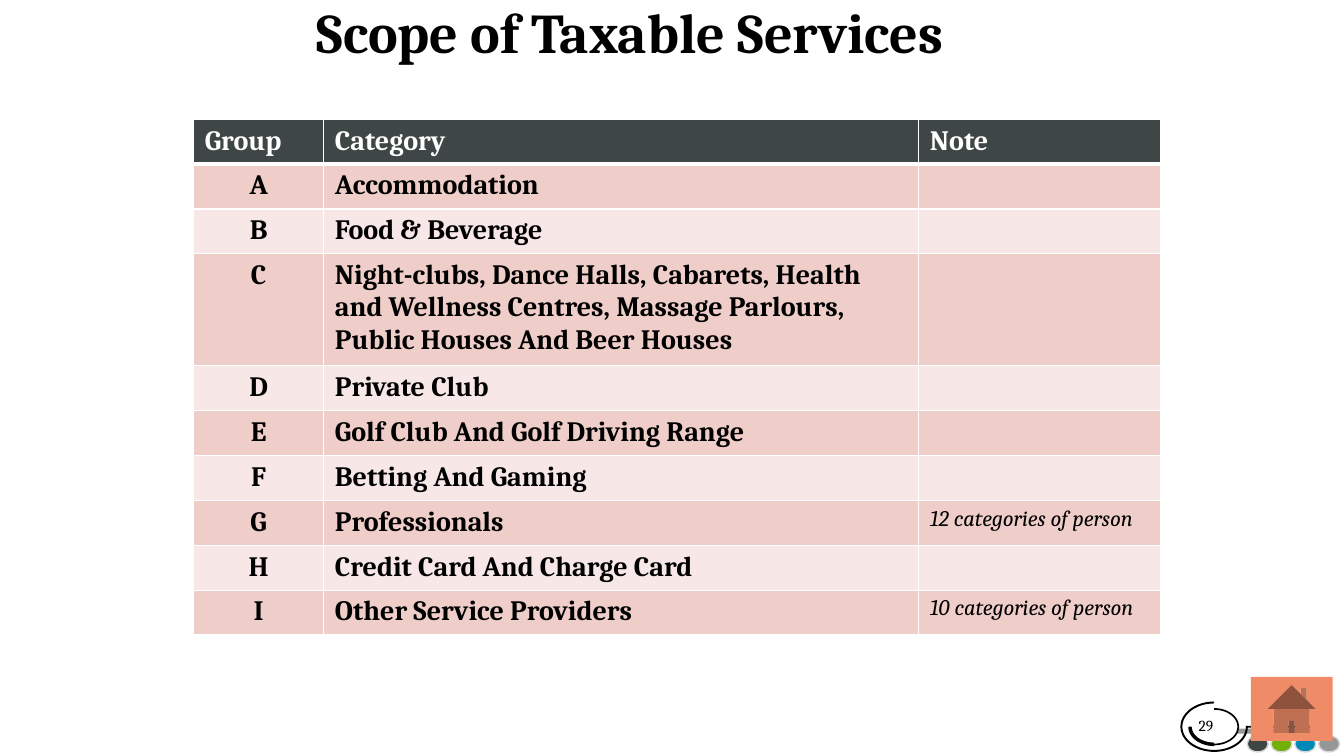
import math

import lxml.etree
import pptx
import pptx.dml.color
import pptx.enum.shapes
import pptx.enum.text
import pptx.oxml.ns
import pptx.util

Pt = pptx.util.Pt
SHAPES = pptx.enum.shapes.MSO_SHAPE
ALIGN = pptx.enum.text.PP_ALIGN
FONT = "Cambria"
COLOURS = {
    "black": "000000", "white": "FFFFFF", "header": "3F4646",
    "odd_row": "EFCECA", "even_row": "F7E8E7", "home": "EF8B67",
    "bar": "999999", "dot_line": "D8D8D8",
    "slate": "3F4646", "green": "71AF09", "blue": "0089B7", "grey": "959698",
}
HEADINGS = ("Group", "Category", "Note")
SERVICES = [
    ("A", "Accommodation", ""),
    ("B", "Food & Beverage", ""),
    ("C", "Night-clubs, Dance Halls, Cabarets, Health and Wellness Centres, "
          "Massage Parlours, Public Houses And Beer Houses", ""),
    ("D", "Private Club", ""),
    ("E", "Golf Club And Golf Driving Range", ""),
    ("F", "Betting And Gaming", ""),
    ("G", "Professionals", "12 categories of person"),
    ("H", "Credit Card And Charge Card", ""),
    ("I", "Other Service Providers", "10 categories of person"),
]


def colour(name):
    """Return the named colour as an RGB value."""
    return pptx.dml.color.RGBColor.from_string(COLOURS[name])


def add_run(paragraph, text, size, colour_name="black", bold=False, italic=False):
    """Add one formatted run to a paragraph."""
    run = paragraph.add_run()
    run.text = text
    run.font.name = FONT
    run.font.size = Pt(size)
    run.font.bold = bold
    run.font.italic = italic
    run.font.color.rgb = colour(colour_name)


def paint(shape, fill_name, line_name=None):
    """Give a shape a flat fill and an optional thin outline."""
    shape.shadow.inherit = False
    shape.fill.solid()
    shape.fill.fore_color.rgb = colour(fill_name)
    if line_name:
        shape.line.color.rgb = colour(line_name)
        shape.line.width = Pt(1)
    else:
        shape.line.fill.background()


def add_painted(slide, kind, box, fill_name, line_name=None):
    """Add a painted preset shape in a box given in points."""
    shape = slide.shapes.add_shape(kind, *map(Pt, box))
    paint(shape, fill_name, line_name)


def add_text_box(slide, box):
    """Add a wrapping text box and return its first paragraph."""
    frame = slide.shapes.add_textbox(*map(Pt, box)).text_frame
    frame.word_wrap = True
    return frame.paragraphs[0]


def add_arc_band(slide, centre, radii, thickness, start, sweep):
    """Draw a band along an elliptical arc, angles clockwise from the right."""
    angles = [math.radians(start + sweep * step / 48) for step in range(49)]

    def edge(inset):
        return [(Pt(centre[0] + (radii[0] - inset) * math.cos(angle)),
                 Pt(centre[1] + (radii[1] - inset) * math.sin(angle)))
                for angle in angles]

    points = edge(0) + edge(thickness)[::-1]
    builder = slide.shapes.build_freeform(*points[0], scale=1.0)
    builder.add_line_segments(points[1:], close=True)
    paint(builder.convert_to_shape(), "black")


def add_footer(slide, box):
    """Place the page number badge, its bars and the row of dots."""
    left, top, width, height = box
    number = add_text_box(slide, (left + 5.8, top + 7.2, 57, 21))
    add_run(number, "29", 11)
    add_painted(slide, SHAPES.RECTANGLE, (left + 40.3, top + 19.4, 65, 3.6), "bar")
    centre = (left + 24.1, top + height / 2)
    add_arc_band(slide, centre, (24.1, 18), 1.4, 0, 270)
    add_arc_band(slide, centre, (17.8, 13.3), 1.2, -90, 270)
    add_painted(slide, SHAPES.RECTANGLE, (left + 46.8, top + 17.3, 58.3, 1.4), "black")
    add_arc_band(slide, centre, (18.5, 13.8), 2.5, 90, 90)
    dot_width, dot_pitch = 15.1, 17
    first = left + width - dot_width - 3 * dot_pitch
    for index, name in enumerate(("slate", "green", "blue", "grey")):
        dot = (first + index * dot_pitch, top + 24.5, dot_width, 11.5)
        add_painted(slide, SHAPES.OVAL, dot, name, "dot_line")


def set_borders(cell, bottom_width):
    """Draw white lines on all four sides of a cell."""
    properties = cell._tc.get_or_add_tcPr()
    for tag, width in (("a:lnL", 1), ("a:lnR", 1), ("a:lnT", 1), ("a:lnB", bottom_width)):
        line = lxml.etree.SubElement(
            properties, pptx.oxml.ns.qn(tag), w=str(Pt(width)))
        fill = lxml.etree.SubElement(line, pptx.oxml.ns.qn("a:solidFill"))
        lxml.etree.SubElement(
            fill, pptx.oxml.ns.qn("a:srgbClr"), val=COLOURS["white"])


def add_services_table(slide, box):
    """Place the table of taxable service groups."""
    rows = [HEADINGS] + SERVICES
    table = slide.shapes.add_table(len(rows), len(HEADINGS), *map(Pt, box)).table
    for column, width in zip(table.columns, (93, 425, box[2] - 518)):
        column.width = Pt(width)
    for row_index, values in enumerate(rows):
        is_header = row_index == 0
        table.rows[row_index].height = Pt(80 if values[0] == "C" else 32)
        fill_name = "header" if is_header else "odd_row" if row_index % 2 else "even_row"
        for column_index, text in enumerate(values):
            cell = table.cell(row_index, column_index)
            cell.margin_left = cell.margin_right = Pt(8)
            cell.margin_top = cell.margin_bottom = Pt(4)
            set_borders(cell, 3 if is_header else 1)
            cell.fill.solid()
            cell.fill.fore_color.rgb = colour(fill_name)
            paragraph = cell.text_frame.paragraphs[0]
            if column_index == 0 and not is_header:
                paragraph.alignment = ALIGN.CENTER
            is_note = column_index == 2 and not is_header
            if text:
                add_run(paragraph, text, 16 if is_note else 20,
                        "white" if is_header else "black",
                        bold=not is_note, italic=is_note)


def add_title(slide, box):
    """Place the slide title."""
    paragraph = add_text_box(slide, box)
    paragraph.line_spacing = 0.9
    add_run(paragraph, "Scope of Taxable Services", 40, bold=True)


def main():
    """Build the slide and save the presentation."""
    presentation = pptx.Presentation()
    presentation.slide_width = Pt(960)
    presentation.slide_height = Pt(540)
    slide = presentation.slides.add_slide(presentation.slide_layouts[6])
    add_footer(slide, (843.2, 501.1, 113.7, 36))
    add_services_table(slide, (138.3, 85.2, 690.5, 368))
    add_title(slide, (219, 0, 620.6, 54))
    add_painted(slide, SHAPES.ACTION_BUTTON_HOME, (893.5, 483.6, 58.3, 45.7), "home")
    presentation.save("out.pptx")


if __name__ == "__main__":
    main()
